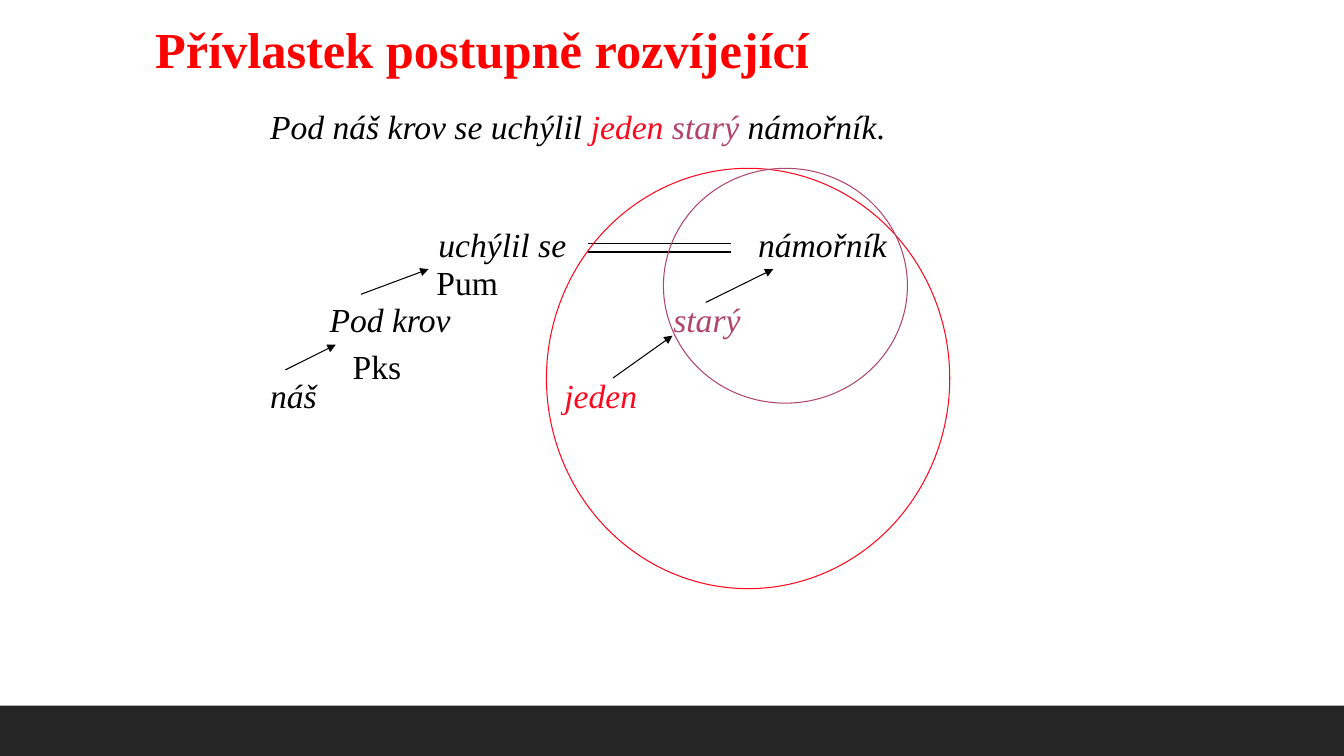
from dataclasses import dataclass

from lxml import etree
from pptx import Presentation
from pptx.dml.color import RGBColor
from pptx.enum.shapes import MSO_CONNECTOR, MSO_SHAPE
from pptx.enum.text import MSO_AUTO_SIZE
from pptx.oxml.ns import qn
from pptx.util import Inches, Pt

STRAIGHT = MSO_CONNECTOR.STRAIGHT
OVAL = MSO_SHAPE.OVAL
RECTANGLE = MSO_SHAPE.RECTANGLE
FIT_SHAPE = MSO_AUTO_SIZE.SHAPE_TO_FIT_TEXT

FONT = "Times New Roman"
LINE_WIDTH = Pt(0.75)
COLORS = {
    "title": "FF0000",
    "text": "000000",
    "jeden": "FB071E",
    "starý": "AF456B",
    "footer": "262626",
}


@dataclass
class Run:
    text: str
    color: str = "text"
    italic: bool = True


@dataclass
class Label:
    run: Run
    left: float
    top: float
    width: float


@dataclass
class Line:
    start: tuple[float, float]
    end: tuple[float, float]
    arrow: bool = True


@dataclass
class Circle:
    left: float
    top: float
    width: float
    height: float
    color: str


SENTENCE = [
    Run("Pod náš krov se uchýlil "),
    Run("jeden ", "jeden"),
    Run("starý", "starý"),
    Run(" námořník"),
    Run(".", italic=False),
]
LABELS = [
    Label(Run("námořník"), 7.42, 2.17, 1.49),
    Label(Run("uchýlil se"), 4.25, 2.17, 1.51),
    Label(Run("Pod krov"), 3.17, 2.92, 1.43),
    Label(Run("náš"), 2.58, 3.67, 0.68),
    Label(Run("Pum", italic=False), 4.23, 2.55, 0.82),
    Label(Run("Pks", italic=False), 3.4, 3.38, 0.69),
    Label(Run("starý", "starý"), 6.58, 2.92, 0.87),
    Label(Run("jeden", "jeden"), 5.5, 3.67, 0.94),
]
LINES = [
    Line((7.25, 2.42), (5.83, 2.42), arrow=False),
    Line((7.25, 2.5), (5.83, 2.5), arrow=False),
    Line((3.58, 2.92), (4.25, 2.67)),
    Line((2.83, 3.67), (3.33, 3.42)),
    Line((7, 3), (7.67, 2.67)),
    Line((6.08, 3.75), (6.67, 3.33)),
]
CIRCLES = [
    Circle(5.42, 1.67, 4, 4.17, "jeden"),
    Circle(6.58, 1.67, 2.42, 2.33, "starý"),
]


def rgb(name: str) -> RGBColor:
    return RGBColor.from_string(COLORS[name])


def add_text(slide, runs: list[Run], left: float, top: float, width: float,
             height: float = 0.5, size: int = 24, bold: bool = False) -> None:
    box = slide.shapes.add_textbox(
        Inches(left), Inches(top), Inches(width), Inches(height))
    frame = box.text_frame
    frame.word_wrap = False
    frame.auto_size = FIT_SHAPE
    for item in runs:
        run = frame.paragraphs[0].add_run()
        run.text = item.text
        font = run.font
        font.name = FONT
        font.size = Pt(size)
        font.bold = bold
        font.italic = item.italic
        font.color.rgb = rgb(item.color)


def add_line(slide, line: Line) -> None:
    connector = slide.shapes.add_connector(
        STRAIGHT, *(Inches(value) for value in line.start + line.end))
    connector.line.color.rgb = rgb("text")
    connector.line.width = LINE_WIDTH
    if line.arrow:
        outline = connector.line._get_or_add_ln()
        etree.SubElement(outline, qn("a:tailEnd"), type="triangle")
    etree.SubElement(connector._element.spPr, qn("a:effectLst"))


def add_circle(slide, circle: Circle) -> None:
    shape = slide.shapes.add_shape(
        OVAL, Inches(circle.left), Inches(circle.top),
        Inches(circle.width), Inches(circle.height))
    shape.shadow.inherit = False
    shape.fill.background()
    shape.line.color.rgb = rgb(circle.color)
    shape.line.width = LINE_WIDTH


def add_footer(slide) -> None:
    footer = slide.shapes.add_shape(
        RECTANGLE, Inches(0), Inches(7), Inches(13.33), Inches(0.5))
    footer.shadow.inherit = False
    footer.fill.solid()
    footer.fill.fore_color.rgb = rgb("footer")
    footer.line.fill.background()


def main() -> None:
    presentation = Presentation()
    presentation.slide_width = Inches(13.33)
    presentation.slide_height = Inches(7.5)
    slide = presentation.slides.add_slide(presentation.slide_layouts[6])

    add_footer(slide)
    add_text(slide, [Run("Přívlastek postupně rozvíjející", "title", italic=False)],
             1.44, 0.13, 6.76, height=0.71, size=36, bold=True)
    add_text(slide, SENTENCE, 2.58, 1, 6.48)
    for label in LABELS:
        add_text(slide, [label.run], label.left, label.top, label.width)
    for line in LINES:
        add_line(slide, line)
    for circle in CIRCLES:
        add_circle(slide, circle)

    presentation.save("out.pptx")


if __name__ == "__main__":
    main()
